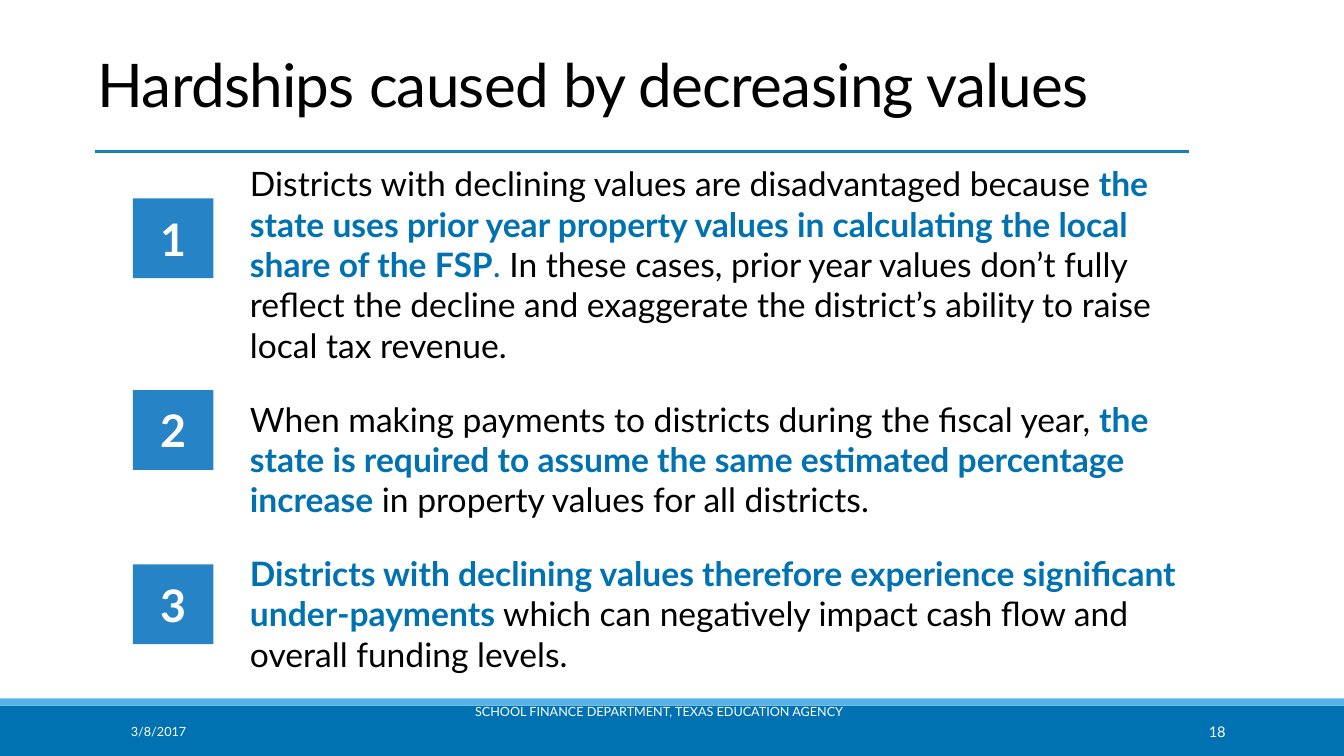
import pptx
import pptx.dml.color
import pptx.enum.shapes
import pptx.enum.text
import pptx.oxml.ns
import pptx.util
from lxml import etree

Cm, Pt = pptx.util.Cm, pptx.util.Pt
ALIGN = pptx.enum.text.PP_ALIGN
ANCHOR = pptx.enum.text.MSO_ANCHOR

FONT = "Lato"
BLACK, WHITE, BLUE = "000000", "FFFFFF", "0072B2"
SKY, BADGE_BLUE, RULE_BLUE = "56B4E9", "2683C6", "1482AC"

# Each hardship: top of its number badge, then runs of (text, colour, bold)
HARDSHIPS = [
    (5.0, [
        ("Districts with declining values are disadvantaged because ", BLACK, False),
        ("the state uses prior year property values in calculating the local "
         "share of the FSP", BLUE, True),
        (". ", BLUE, False),
        ("In these cases, prior year values don’t fully reflect the decline and "
         "exaggerate the district’s ability to raise local tax revenue.", BLACK, False),
    ]),
    (9.83, [
        ("When making payments to districts during the fiscal year, ", BLACK, False),
        ("the state is required to assume the same estimated percentage increase",
         BLUE, True),
        (" in property values for all districts.", BLACK, False),
    ]),
    (14.22, [
        ("Districts with declining values therefore experience significant "
         "under-payments ", BLUE, True),
        ("which can negatively impact cash flow and overall funding levels.",
         BLACK, False),
    ]),
]


def rgb(hex_colour):
    return pptx.dml.color.RGBColor.from_string(hex_colour)


def add_run(paragraph, text, size, colour, bold=False):
    run = paragraph.add_run()
    run.text = text
    run.font.name = FONT
    run.font.size = Pt(size)
    run.font.bold = bold
    run.font.color.rgb = rgb(colour)
    return run


def add_block(slide, left, top, width, height, colour):
    block = slide.shapes.add_shape(
        pptx.enum.shapes.MSO_SHAPE.RECTANGLE, Cm(left), Cm(top), Cm(width), Cm(height))
    block.shadow.inherit = False
    block.fill.solid()
    block.fill.fore_color.rgb = rgb(colour)
    block.line.fill.background()
    return block


def add_text_frame(slide, left, top, width, height, anchor=ANCHOR.TOP):
    box = slide.shapes.add_textbox(Cm(left), Cm(top), Cm(width), Cm(height))
    box.text_frame.word_wrap = True
    box.text_frame.vertical_anchor = anchor
    return box.text_frame


def add_footer(slide, left, top, width, text, size, align):
    footer = add_text_frame(slide, left, top, width, 1.02, ANCHOR.MIDDLE)
    footer.paragraphs[0].alignment = align
    add_run(footer.paragraphs[0], text, size, WHITE)


def add_title(slide, text):
    title = add_text_frame(slide, 2.21, 1.07, 27.94, 2.92)
    run = add_run(title.paragraphs[0], text, 43, BLACK)
    run.font._element.set("spc", "-50")  # letter spacing of -0.5 pt


def add_rule(slide, left, right, y):
    rule = slide.shapes.add_connector(
        pptx.enum.shapes.MSO_CONNECTOR.STRAIGHT, Cm(left), Cm(y), Cm(right), Cm(y))
    rule.line.color.rgb = rgb(RULE_BLUE)
    rule.line.width = Pt(2.25)
    etree.SubElement(rule._element.spPr, pptx.oxml.ns.qn("a:effectLst"))


def add_hardships(slide):
    body = add_text_frame(slide, 6.05, 3.99, 23.93, 13.77)
    for index, (_, runs) in enumerate(HARDSHIPS):
        paragraph = body.add_paragraph() if index else body.paragraphs[0]
        if index:
            paragraph.space_before = Pt(12)
        paragraph.space_after = Pt(12)
        for text, colour, bold in runs:
            add_run(paragraph, text, 24, colour, bold)


def add_badge(slide, top, number):
    badge = add_block(slide, 3.35, top, 2.03, 2.01, BADGE_BLUE)
    badge.text_frame.vertical_anchor = ANCHOR.MIDDLE
    paragraph = badge.text_frame.paragraphs[0]
    paragraph.alignment = ALIGN.CENTER
    add_run(paragraph, str(number), 32, WHITE, True)


def main():
    deck = pptx.Presentation()
    deck.slide_width, deck.slide_height = Cm(33.87), Cm(19.05)
    slide = deck.slides.add_slide(deck.slide_layouts[6])

    # Footer bands
    add_block(slide, 0, 17.78, 33.87, 1.27, BLUE)
    add_block(slide, 0, 17.6, 33.87, 0.18, SKY)

    # Heading
    add_title(slide, "Hardships caused by decreasing values")
    add_rule(slide, 2.39, 29.97, 3.81)

    # Numbered hardships
    add_hardships(slide)
    for number, (top, _) in enumerate(HARDSHIPS, start=1):
        add_badge(slide, top, number)

    # Footer text
    add_footer(slide, 3.05, 17.93, 6.86, "3/8/2017", 9, ALIGN.LEFT)
    add_footer(slide, 9.91, 17.42, 13.39,
               "SCHOOL FINANCE DEPARTMENT, TEXAS EDUCATION AGENCY", 9, ALIGN.CENTER)
    add_footer(slide, 27.51, 17.93, 3.63, "18", 10.5, ALIGN.RIGHT)

    deck.save("out.pptx")


if __name__ == "__main__":
    main()
